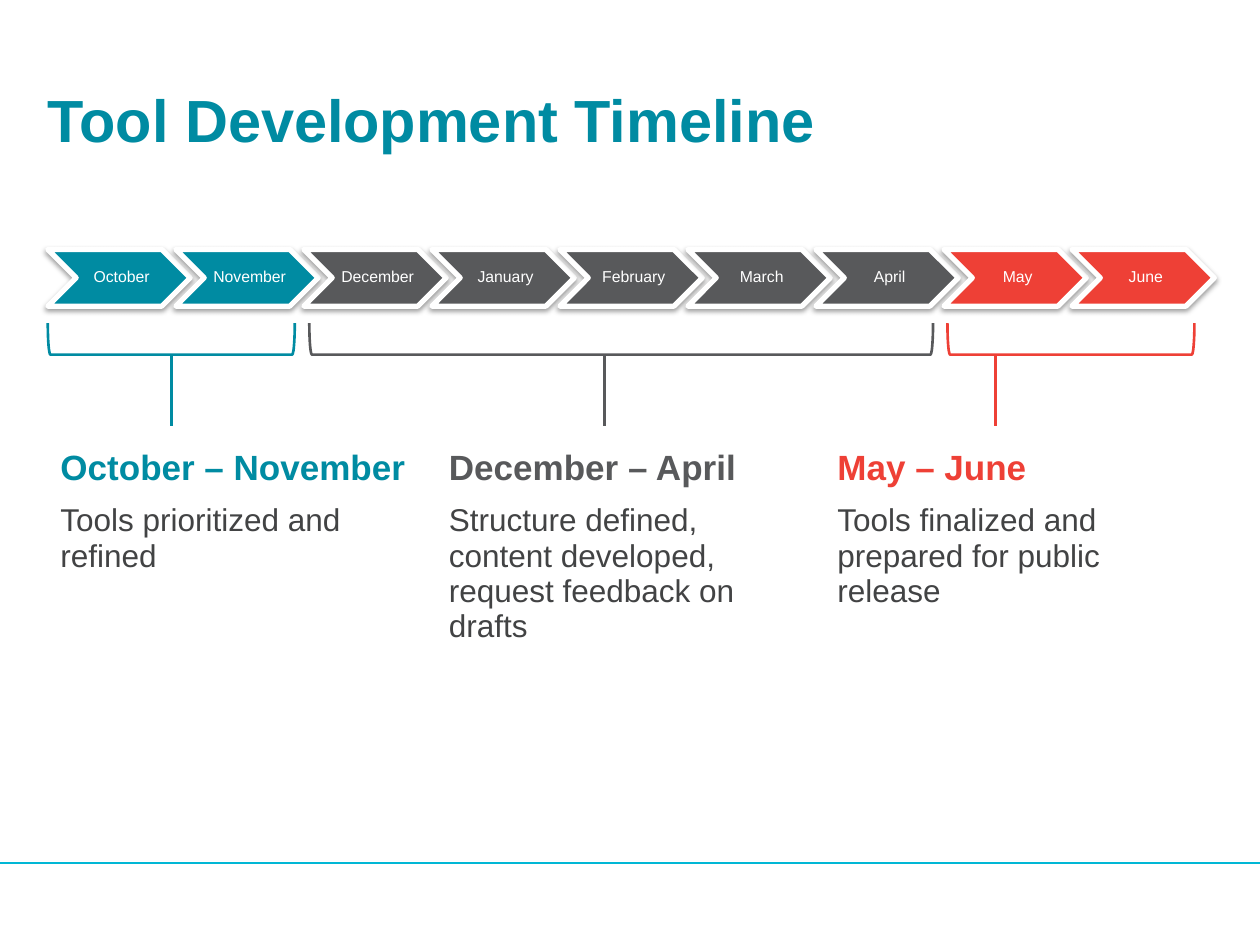
from lxml import etree
from pptx import Presentation
from pptx.dml.color import RGBColor
from pptx.enum.shapes import MSO_CONNECTOR, MSO_SHAPE
from pptx.enum.text import MSO_ANCHOR, PP_ALIGN
from pptx.oxml.ns import qn
from pptx.util import Inches, Pt

TEAL = RGBColor(0x00, 0x8B, 0xA2)
GRAY = RGBColor(0x58, 0x59, 0x5B)
RED = RGBColor(0xEE, 0x40, 0x36)
CYAN = RGBColor(0x00, 0xB7, 0xD5)
DARK = RGBColor(0x42, 0x43, 0x44)
WHITE = RGBColor(0xFF, 0xFF, 0xFF)


def write(frame, text, size, color, bold=False, align=PP_ALIGN.LEFT, spacing=1.0):
    frame.word_wrap = True
    paragraph = frame.paragraphs[0]
    paragraph.alignment = align
    paragraph.line_spacing = spacing
    run = paragraph.add_run()
    run.text = text
    run.font.name = "Arial"
    run.font.size = Pt(size)
    run.font.bold = bold
    run.font.color.rgb = color


def drop_shadow(shape, opacity, distance):
    """Cast a soft black shadow straight down; opacity in percent, distance in points."""
    shape.shadow.inherit = False
    effects = shape._element.spPr.find(qn("a:effectLst"))
    shadow = etree.SubElement(effects, qn("a:outerShdw"), blurRad=str(Pt(3.1)),
                              dist=str(Pt(distance)), dir="5400000", rotWithShape="0")
    black = etree.SubElement(shadow, qn("a:srgbClr"), val="000000")
    etree.SubElement(black, qn("a:alpha"), val=str(opacity * 1000))


prs = Presentation()
prs.slide_width = Inches(10)
prs.slide_height = Inches(7.5)
slide = prs.slides.add_slide(prs.slide_layouts[6])
shapes = slide.shapes

# Footer band and title
footer = shapes.add_shape(MSO_SHAPE.RECTANGLE, 0, Inches(6.83), Inches(10), Inches(0.67))
footer.fill.solid()
footer.fill.fore_color.rgb = WHITE
footer.line.fill.background()
drop_shadow(footer, 35, 1.8)

title = shapes.add_textbox(Inches(0.38), Inches(0.52), Inches(9.25), Inches(0.84)).text_frame
title.margin_left = title.margin_right = title.margin_top = title.margin_bottom = 0
title.vertical_anchor = MSO_ANCHOR.MIDDLE
write(title, "Tool Development Timeline", 34, TEAL, bold=True)

# Month chevrons
months = [
    ("October", TEAL), ("November", TEAL), ("December", GRAY),
    ("January", GRAY), ("February", GRAY), ("March", GRAY),
    ("April", GRAY), ("May", RED), ("June", RED),
]
MONTH_STEP = 1.016
for index, (month, color) in enumerate(months):
    left = 0.38 + index * MONTH_STEP
    chevron = shapes.add_shape(MSO_SHAPE.CHEVRON, Inches(left), Inches(1.98),
                               Inches(1.13), Inches(0.45))
    chevron.fill.solid()
    chevron.fill.fore_color.rgb = color
    chevron.line.color.rgb = WHITE
    chevron.line.width = Pt(3)
    drop_shadow(chevron, 38, 1.6)

    label = shapes.add_textbox(Inches(left + 0.23), Inches(1.98),
                               Inches(0.68), Inches(0.45)).text_frame
    label.margin_left = Inches(0.04)
    label.margin_right = label.margin_top = label.margin_bottom = Inches(0.01)
    label.vertical_anchor = MSO_ANCHOR.MIDDLE
    write(label, month, 9, WHITE, align=PP_ALIGN.CENTER, spacing=0.9)

# Phase descriptions
phases = [
    ("October – November", "Tools prioritized and refined", TEAL),
    ("December – April",
     "Structure defined, content developed, request feedback on drafts", GRAY),
    ("May – June", "Tools finalized and prepared for public release", RED),
]
table = shapes.add_table(2, 3, Inches(0.38), Inches(3.51), Inches(9.25), Inches(1.73)).table
table.horz_banding = False
table.rows[0].height = Inches(0.41)
table.rows[1].height = Inches(1.32)
for column, (period, work, color) in enumerate(phases):
    heading, body = table.cell(0, column), table.cell(1, column)
    for cell in (heading, body):
        cell.fill.solid()
        cell.fill.fore_color.rgb = WHITE
    body.margin_right = Inches(0.2)
    write(heading.text_frame, period, 20, color, bold=True)
    write(body.text_frame, work, 18, DARK)

# Brackets under the months: centre, span, colour
BRACKET_DEPTH = 0.25
for center, span, color in [(1.36, 1.96, TEAL), (4.93, 4.95, GRAY), (8.5, 1.96, RED)]:
    bracket = shapes.add_shape(
        MSO_SHAPE.LEFT_BRACKET, Inches(center - BRACKET_DEPTH / 2), Inches(2.69 - span / 2),
        Inches(BRACKET_DEPTH), Inches(span))
    bracket.rotation = 270
    bracket.fill.background()
    bracket.line.color.rgb = color
    bracket.line.width = Pt(1.5)
    bracket.shadow.inherit = False

# Footer rule and stems from the brackets to the phases
rules = [
    (0, 6.85, 10, 6.85, CYAN, 0.75),
    (1.36, 2.82, 1.36, 3.38, TEAL, 1.5),
    (4.8, 2.82, 4.8, 3.38, GRAY, 1.5),
    (7.9, 2.82, 7.9, 3.38, RED, 1.5),
]
for x1, y1, x2, y2, color, weight in rules:
    rule = shapes.add_connector(MSO_CONNECTOR.STRAIGHT, Inches(x1), Inches(y1),
                                Inches(x2), Inches(y2))
    rule.line.color.rgb = color
    rule.line.width = Pt(weight)
    etree.SubElement(rule._element.spPr, qn("a:effectLst"))

prs.save("out.pptx")
